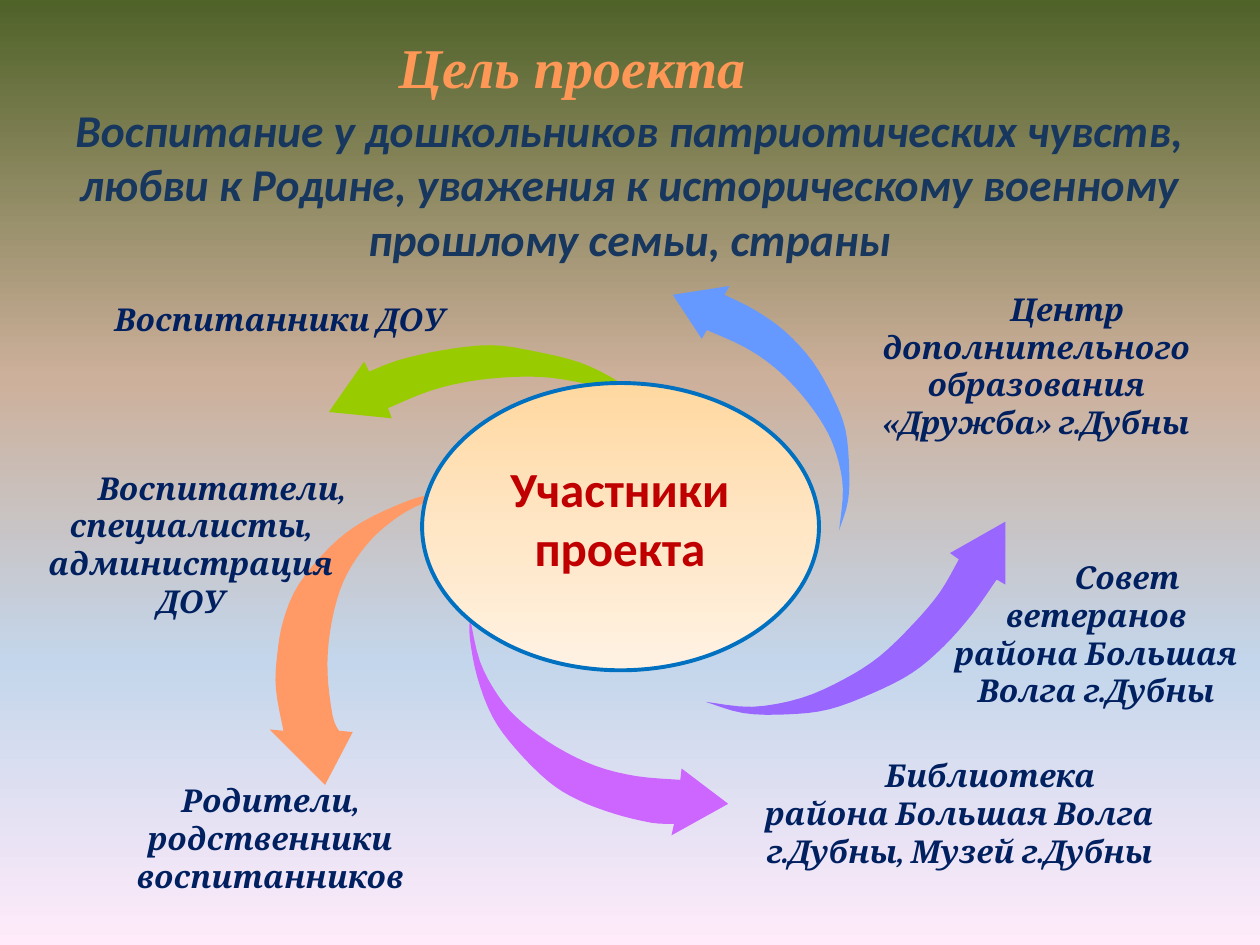
import pptx
import pptx.util
import pptx.dml.color
import pptx.enum.shapes
import pptx.enum.text
import pptx.oxml
import pptx.oxml.ns

PX = 9144  # 100 px to the inch
RGB = pptx.dml.color.RGBColor
qn = pptx.oxml.ns.qn

NAVY = RGB(0x00, 0x20, 0x60)
STEEL = RGB(0x17, 0x37, 0x5E)
RED = RGB(0xC0, 0x00, 0x00)
RIM = RGB(0x00, 0x70, 0xC0)
PINK = RGB(0xCC, 0x66, 0xFF)
CORAL = RGB(0xFF, 0x99, 0x66)
GREEN = RGB(0x99, 0xCC, 0x00)
BLUE = RGB(0x66, 0x99, 0xFF)
VIOLET = RGB(0x99, 0x66, 0xFF)

SKY = [(0, RGB(0x4F, 0x62, 0x28)), (40, RGB(0xCD, 0xB0, 0x9B)),
       (70, RGB(0xC4, 0xD6, 0xEB)), (100, RGB(0xFF, 0xEB, 0xFA))]
CREAM = [(0, RGB(0xFF, 0xD8, 0xA0)), (50, RGB(0xFF, 0xE6, 0xC5)),
         (100, RGB(0xFF, 0xF2, 0xE3))]
FLAME = [(0, RGB(0x9D, 0x47, 0x00)), (78, RGB(0xFF, 0x98, 0x56)),
         (100, RGB(0xFF, 0xF5, 0xF1))]

# colour, head, outer edge from head to tail, inner edge from tail to head
ARROWS = [
    (PINK, [(541, 610), (578, 638), (533, 663)],
     [(535, 654), (517, 653), (488, 646), (459, 635), (435, 620), (409, 594),
      (391, 569), (379, 538), (373, 507), (373, 490)],
     [(373, 490), (381, 525), (396, 553), (414, 573), (442, 593), (473, 608),
      (505, 616), (540, 619)]),
    (CORAL, [(280, 581), (258, 623), (214, 579)],
     [(225, 580), (219, 547), (220, 520), (225, 492), (237, 464), (262, 434),
      (288, 414), (325, 397), (350, 391), (371, 388)],
     [(371, 388), (330, 402), (302, 421), (283, 443), (270, 468), (262, 501),
      (260, 534), (264, 568), (269, 580)]),
    (GREEN, [(311, 332), (261, 327), (289, 287)],
     [(293, 295), (316, 286), (351, 278), (390, 274), (425, 279), (461, 288),
      (491, 303), (518, 323), (539, 347)],
     [(539, 347), (510, 323), (481, 309), (446, 301), (415, 299), (377, 302),
      (342, 310), (308, 324)]),
    (BLUE, [(557, 269), (534, 234), (579, 227)],
     [(575, 234), (599, 246), (623, 263), (645, 287), (661, 315), (671, 341),
      (674, 372), (673, 398), (666, 421)],
     [(666, 421), (669, 388), (664, 361), (654, 338), (636, 313), (614, 291),
      (590, 275), (561, 262)]),
    (VIOLET, [(754, 439), (798, 414), (798, 464)],
     [(791, 460), (772, 487), (749, 513), (724, 534), (693, 550), (658, 563),
      (625, 567), (590, 566), (560, 557)],
     [(560, 557), (597, 561), (636, 554), (670, 539), (698, 521), (725, 495),
      (746, 470), (761, 444)]),
]

OVAL = (335, 304, 315, 228)

HEAD = {"name": "Times New Roman", "size": 32, "bold": True, "italic": True}
GOAL = {"name": "Calibri", "size": 26, "bold": True, "italic": True}
CORE = {"name": "Calibri", "size": 28, "bold": True}
NOTE = {"name": "Cambria", "size": 18, "bold": True, "italic": True}

# box, paragraphs, format, colour or gradient, first-line indent
TEXTS = [
    ((75, 21, 758, 64), ["Цель проекта"], HEAD, FLAME, 0),
    ((665, 225, 315, 131),
     ["Центр дополнительного образования «Дружба» г.Дубны"], NOTE, NAVY, 49),
    ((59, 615, 311, 135), ["Родители, родственники", "воспитанников"],
     NOTE, NAVY, 0),
    ((0, 76, 1000, 165),
     ["Воспитание у дошкольников патриотических чувств, любви к Родине, "
      "уважения к историческому военному прошлому семьи, страны"],
     GOAL, STEEL, 0),
    ((43, 233, 358, 40), ["Воспитанники ДОУ"], NOTE, NAVY, 0),
    ((382, 359, 220, 104), ["Участники", "проекта"], CORE, RED, 0),
    ((0, 367, 303, 131), ["Воспитатели, специалисты, администрация ДОУ"],
     NOTE, NAVY, 49),
    ((740, 438, 260, 131), ["Совет ветеранов района Большая Волга г.Дубны"],
     NOTE, NAVY, 49),
    ((594, 595, 335, 131),
     ["Библиотека района Большая Волга г.Дубны, Музей г.Дубны"],
     NOTE, NAVY, 49),
]


def emu(box):
    return [n * PX for n in box]


def blend(fill, root, stops):
    """Give fill a top-to-bottom gradient; root is the XML that holds it."""
    fill.gradient()
    fill.gradient_angle = 270
    rows = root.find(".//" + qn("a:gsLst"))
    for old in list(rows):
        rows.remove(old)
    for pos, tint in stops:
        rows.append(pptx.oxml.parse_xml(
            f'<a:gs {pptx.oxml.ns.nsdecls("a")} pos="{pos * 1000}">'
            f'<a:srgbClr val="{tint}"/></a:gs>'))


def curve(knots, steps=4):
    """Points of a Catmull-Rom spline through the knots."""
    ends = [knots[0], *knots, knots[-1]]
    out = []
    for a, b, c, d in zip(ends, ends[1:], ends[2:], ends[3:]):
        for i in range(steps):
            t = i / steps
            out.append(tuple(
                q + t / 2 * (r - p + t * (2 * p - 5 * q + 4 * r - s
                                          + t * (3 * (q - r) + s - p)))
                for p, q, r, s in zip(a, b, c, d)))
    return out + [knots[-1]]


def add_arrow(shapes, tint, head, outer, inner):
    dots = [(round(x * PX), round(y * PX))
            for x, y in head + curve(outer) + curve(inner)[1:]]
    pen = shapes.build_freeform(*dots[0])
    pen.add_line_segments(dots[1:], close=True)
    arrow = pen.convert_to_shape()
    arrow.shadow.inherit = False
    arrow.fill.solid()
    arrow.fill.fore_color.rgb = tint
    arrow.line.fill.background()


def add_text(shapes, box, lines, form, tint, indent):
    frame = shapes.add_textbox(*emu(box)).text_frame
    frame.word_wrap = True
    frame.auto_size = pptx.enum.text.MSO_AUTO_SIZE.SHAPE_TO_FIT_TEXT
    for i, line in enumerate(lines):
        para = frame.add_paragraph() if i else frame.paragraphs[0]
        para.alignment = pptx.enum.text.PP_ALIGN.CENTER
        if indent:
            para._p.get_or_add_pPr().set("indent", str(indent * PX))
        run = para.add_run()
        run.text = line
        for key, val in form.items():
            setattr(run.font, key, pptx.util.Pt(val) if key == "size" else val)
        if isinstance(tint, list):
            blend(run.font.fill, run._r, tint)
        else:
            run.font.color.rgb = tint


def main():
    deck = pptx.Presentation()
    deck.slide_width, deck.slide_height = emu((1000, 750))
    slide = deck.slides.add_slide(deck.slide_layouts[6])
    blend(slide.background.fill, slide._element, SKY)
    group = slide.shapes.add_group_shape()
    for arrow in ARROWS:
        add_arrow(group.shapes, *arrow)
    oval = slide.shapes.add_shape(
        pptx.enum.shapes.MSO_SHAPE.OVAL, *emu(OVAL))
    oval.shadow.inherit = False
    blend(oval.fill, oval._element, CREAM)
    oval.line.color.rgb = RIM
    oval.line.width = pptx.util.Pt(2.25)
    for text in TEXTS:
        add_text(slide.shapes, *text)
    deck.save("out.pptx")


if __name__ == "__main__":
    main()
